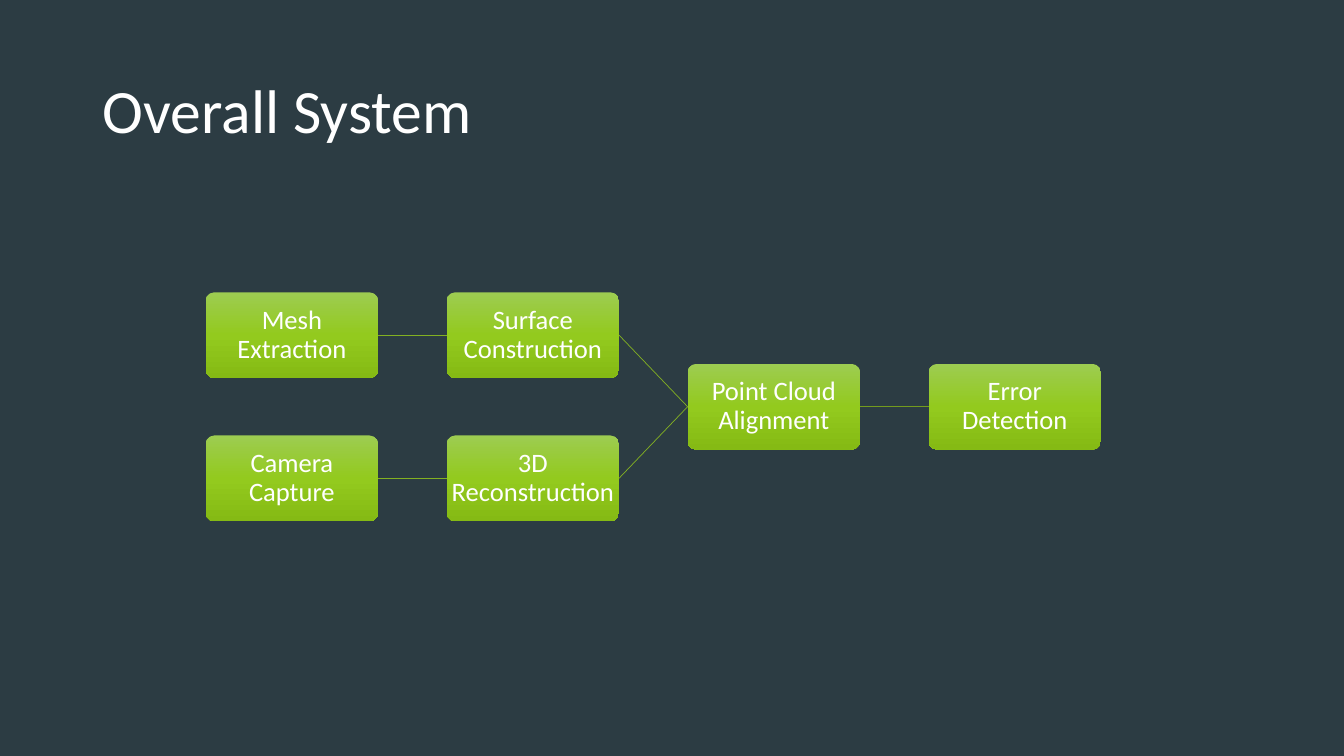
from copy import deepcopy

from pptx import Presentation
from pptx.dml.color import RGBColor
from pptx.enum.shapes import MSO_CONNECTOR as Connector, MSO_SHAPE as Shape
from pptx.enum.text import MSO_ANCHOR as Anchor, PP_ALIGN as Align
from pptx.oxml.ns import qn
from pptx.oxml.xmlchemy import OxmlElement
from pptx.util import Inches, Pt

BACKGROUND = RGBColor(0x2C, 0x3C, 0x43)
WHITE = RGBColor(0xFF, 0xFF, 0xFF)
LINK_GREEN = RGBColor(0x83, 0xB0, 0x22)
LAST_LINK_GREEN = RGBColor(0x73, 0x9B, 0x1E)
BOX_GRADIENT = [
    (0, RGBColor(0x9D, 0xCC, 0x51)),
    (0.5, RGBColor(0x93, 0xCA, 0x1E)),
    (1, RGBColor(0x85, 0xBA, 0x14)),
]

BOX_WIDTH, BOX_HEIGHT = 1.71, 0.85
FIRST_LEFT, COLUMN_STEP = 2.04, 2.39
FIRST_TOP, ROW_STEP = 2.9, 1.42
LEFT_SIDE, RIGHT_SIDE = 1, 3

# name: (column, row); row 0.5 lies midway between the two branches
STAGES = {
    "Error Detection": (3, 0.5),
    "Point Cloud Alignment": (2, 0.5),
    "Surface Construction": (1, 0),
    "Mesh Extraction": (0, 0),
    "3D Reconstruction": (1, 1),
    "Camera Capture": (0, 1),
}
LINKS = [
    ("Point Cloud Alignment", "Error Detection", LAST_LINK_GREEN),
    ("Surface Construction", "Point Cloud Alignment", LINK_GREEN),
    ("Mesh Extraction", "Surface Construction", LINK_GREEN),
    ("3D Reconstruction", "Point Cloud Alignment", LINK_GREEN),
    ("Camera Capture", "3D Reconstruction", LINK_GREEN),
]


class SlideBuilder:
    font_name = "Calibri"
    text_color = WHITE

    def __init__(self, slide):
        self.slide = slide
        slide.background.fill.solid()
        slide.background.fill.fore_color.rgb = BACKGROUND

    def fill_text(self, shape, text, size, align, margin):
        frame = shape.text_frame
        frame_format = {
            "word_wrap": True,
            "vertical_anchor": Anchor.MIDDLE,
            **{f"margin_{side}": Inches(margin)
               for side in ("left", "right", "top", "bottom")},
        }
        for name, value in frame_format.items():
            setattr(frame, name, value)
        paragraph = frame.paragraphs[0]
        paragraph.alignment = align
        paragraph.line_spacing = 0.9
        run = paragraph.add_run()
        run.text = text
        for name, value in {"name": self.font_name, "size": Pt(size)}.items():
            setattr(run.font, name, value)
        run.font.color.rgb = self.text_color

    def title(self, text):
        shape = self.slide.shapes.add_textbox(
            Inches(0.92), Inches(0.4), Inches(11.5), Inches(1.45))
        self.fill_text(shape, text, 44, Align.LEFT, 0.1)

    def stage(self, text, column, row):
        shape = self.slide.shapes.add_shape(
            Shape.ROUNDED_RECTANGLE,
            Inches(FIRST_LEFT + column * COLUMN_STEP),
            Inches(FIRST_TOP + row * ROW_STEP),
            Inches(BOX_WIDTH), Inches(BOX_HEIGHT))
        shape.adjustments[0] = 0.1
        shape.shadow.inherit = False
        shape.line.fill.background()
        self.paint_gradient(shape)
        self.fill_text(shape, text, 19, Align.CENTER, 0.01)
        return shape

    def paint_gradient(self, shape):
        shape.fill.gradient()
        shape.fill.gradient_angle = 270
        stop_list = next(shape._element.spPr.iter(qn("a:gsLst")))
        stop_list.append(deepcopy(stop_list[-1]))
        for stop, (position, color) in zip(shape.fill.gradient_stops, BOX_GRADIENT):
            stop.position = position
            stop.color.rgb = color

    def link(self, source, target, color):
        connector = self.slide.shapes.add_connector(Connector.STRAIGHT, 0, 0, 0, 0)
        connector.begin_connect(source, RIGHT_SIDE)
        connector.end_connect(target, LEFT_SIDE)
        connector.line.color.rgb = color
        connector.line.width = Pt(0.5)
        connector._element.spPr.append(OxmlElement("a:effectLst"))


def main():
    presentation = Presentation()
    presentation.slide_width = Inches(13.33)
    presentation.slide_height = Inches(7.5)
    builder = SlideBuilder(
        presentation.slides.add_slide(presentation.slide_layouts[6]))

    builder.title("Overall System")
    boxes = {name: builder.stage(name, *cell) for name, cell in STAGES.items()}
    for source, target, color in LINKS:
        builder.link(boxes[source], boxes[target], color)

    presentation.save("out.pptx")


if __name__ == "__main__":
    main()
